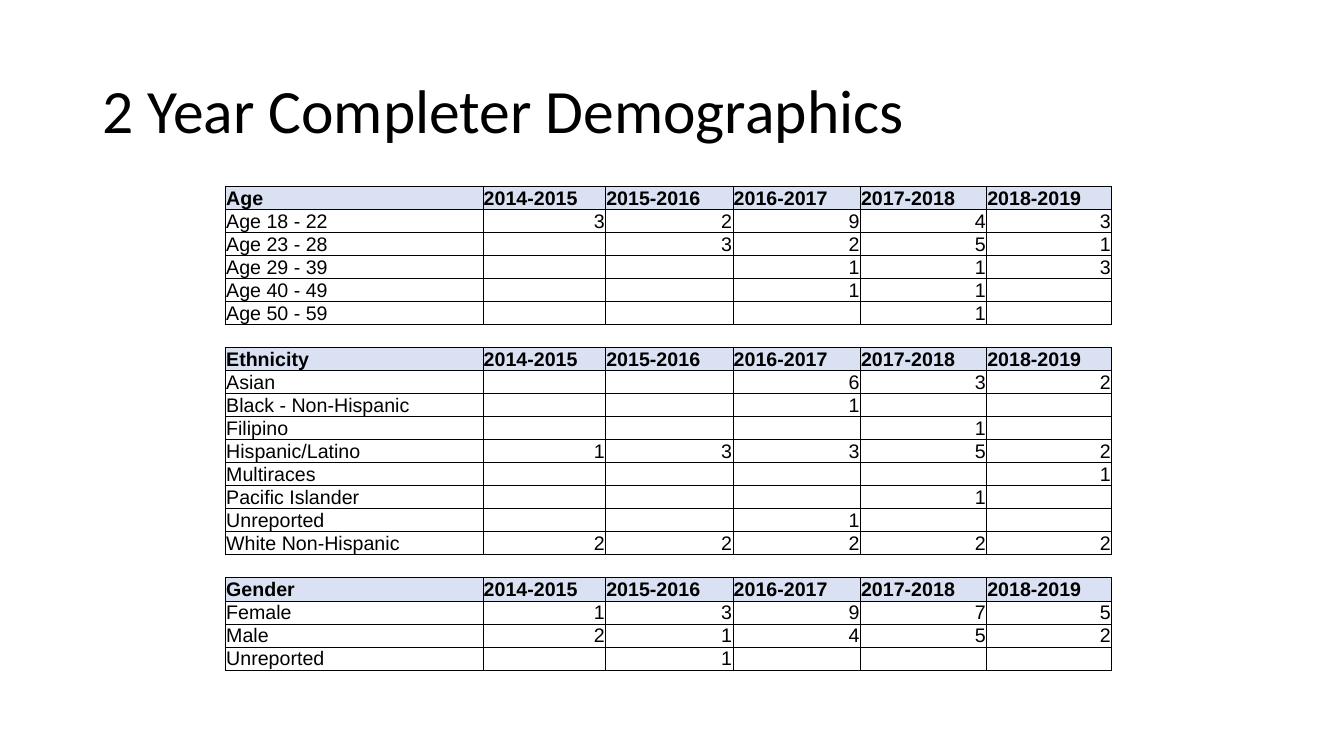
from lxml import etree
from pptx import Presentation
from pptx.dml.color import RGBColor
from pptx.enum.text import MSO_ANCHOR, MSO_AUTO_SIZE, PP_ALIGN
from pptx.oxml.ns import qn
from pptx.util import Cm, Pt

MIDDLE, BOTTOM = MSO_ANCHOR.MIDDLE, MSO_ANCHOR.BOTTOM
LEFT, RIGHT = PP_ALIGN.LEFT, PP_ALIGN.RIGHT
NO_AUTOFIT = MSO_AUTO_SIZE.NONE

BLACK, HEADER_FILL = "000000", "D9E1F2"
YEARS = ["2014-2015", "2015-2016", "2016-2017", "2017-2018", "2018-2019"]
COLUMN_WIDTHS = [6.49, 3.09, 3.21, 3.21, 3.18, 3.15]
ROW_HEIGHT = 0.58
CELL_FORMAT = {
    "vertical_anchor": BOTTOM,
    "margin_left": Cm(0.02),
    "margin_right": Cm(0.02),
    "margin_top": Cm(0.02),
    "margin_bottom": 0,
}
DEMOGRAPHICS = {
    "Age": {
        "Age 18 - 22": [3, 2, 9, 4, 3],
        "Age 23 - 28": ["", 3, 2, 5, 1],
        "Age 29 - 39": ["", "", 1, 1, 3],
        "Age 40 - 49": ["", "", 1, 1, ""],
        "Age 50 - 59": ["", "", "", 1, ""],
    },
    "Ethnicity": {
        "Asian": ["", "", 6, 3, 2],
        "Black - Non-Hispanic": ["", "", 1, "", ""],
        "Filipino": ["", "", "", 1, ""],
        "Hispanic/Latino": [1, 3, 3, 5, 2],
        "Multiraces": ["", "", "", "", 1],
        "Pacific Islander": ["", "", "", 1, ""],
        "Unreported": ["", "", 1, "", ""],
        "White Non-Hispanic": [2, 2, 2, 2, 2],
    },
    "Gender": {
        "Female": [1, 3, 9, 7, 5],
        "Male": [2, 1, 4, 5, 2],
        "Unreported": ["", 1, "", "", ""],
    },
}


def color(value):
    """Return the colour for a hex string."""
    return RGBColor.from_string(value)


def apply_format(target, values):
    """Set each attribute of the target from a dict of values."""
    for name, value in values.items():
        setattr(target, name, value)


def format_font(font, name, size, bold=False):
    """Give a font its typeface, size and weight in black."""
    apply_format(font, {"name": name, "size": Pt(size), "bold": bold})
    font.color.rgb = color(BLACK)


def add_title(slide, text):
    """Fill and place the slide title."""
    title = slide.shapes.title
    apply_format(title, {"left": Cm(2.33), "top": Cm(1.01),
                         "width": Cm(29.21), "height": Cm(3.68)})
    frame = title.text_frame
    frame.text = text
    apply_format(frame, {"vertical_anchor": MIDDLE, "word_wrap": True,
                         "auto_size": NO_AUTOFIT})
    paragraph = frame.paragraphs[0]
    apply_format(paragraph, {"alignment": LEFT, "line_spacing": 0.9})
    format_font(paragraph.runs[0].font, "Calibri", 44)


def set_borders(cell, visible_sides):
    """Draw thin black borders on the visible sides and hide the others."""
    properties = cell._tc.get_or_add_tcPr()
    for side in "LRTB":
        line = etree.SubElement(properties, qn(f"a:ln{side}"), w=str(Pt(0.5)))
        if side in visible_sides:
            fill = etree.SubElement(line, qn("a:solidFill"))
            etree.SubElement(fill, qn("a:srgbClr"), val=BLACK)
        else:
            etree.SubElement(line, qn("a:noFill"))


def fill_cell(cell, value, is_header, is_gap):
    """Write one table cell with its borders, fill and text."""
    apply_format(cell, CELL_FORMAT)
    set_borders(cell, "TB" if is_gap else "LRTB")
    if is_header:
        cell.fill.solid()
        cell.fill.fore_color.rgb = color(HEADER_FILL)
    else:
        cell.fill.background()
    paragraph = cell.text_frame.paragraphs[0]
    if value == "":
        etree.SubElement(paragraph._p, qn("a:endParaRPr"), sz="1200")
        return
    paragraph.alignment = RIGHT if isinstance(value, int) else LEFT
    run = paragraph.add_run()
    run.text = str(value)
    format_font(run.font, "Arial", 14, is_header)


def table_rows():
    """List the rows of all groups, with an empty row between groups."""
    rows = []
    for group, counts in DEMOGRAPHICS.items():
        if rows:
            rows.append([""] * len(COLUMN_WIDTHS))
        rows.append([group, *YEARS])
        rows.extend([label, *values] for label, values in counts.items())
    return rows


def add_demographics_table(slide):
    """Add the table of completers by age, ethnicity and gender."""
    rows = table_rows()
    table = slide.shapes.add_table(
        len(rows), len(COLUMN_WIDTHS), Cm(5.68), Cm(4.7),
        Cm(sum(COLUMN_WIDTHS)), Cm(ROW_HEIGHT * len(rows))).table
    apply_format(table, {"first_row": False, "horz_banding": False})
    for column, width in zip(table.columns, COLUMN_WIDTHS):
        column.width = Cm(width)
    for row, values in zip(table.rows, rows):
        row.height = Cm(ROW_HEIGHT)
        for cell, value in zip(row.cells, values):
            fill_cell(cell, value, values[0] in DEMOGRAPHICS, values[0] == "")


def main():
    """Build and save the presentation."""
    presentation = Presentation()
    apply_format(presentation, {"slide_width": Cm(33.87),
                                "slide_height": Cm(19.05)})
    slide = presentation.slides.add_slide(presentation.slide_layouts[5])
    add_title(slide, "2 Year Completer Demographics")
    add_demographics_table(slide)
    presentation.save("out.pptx")


if __name__ == "__main__":
    main()
